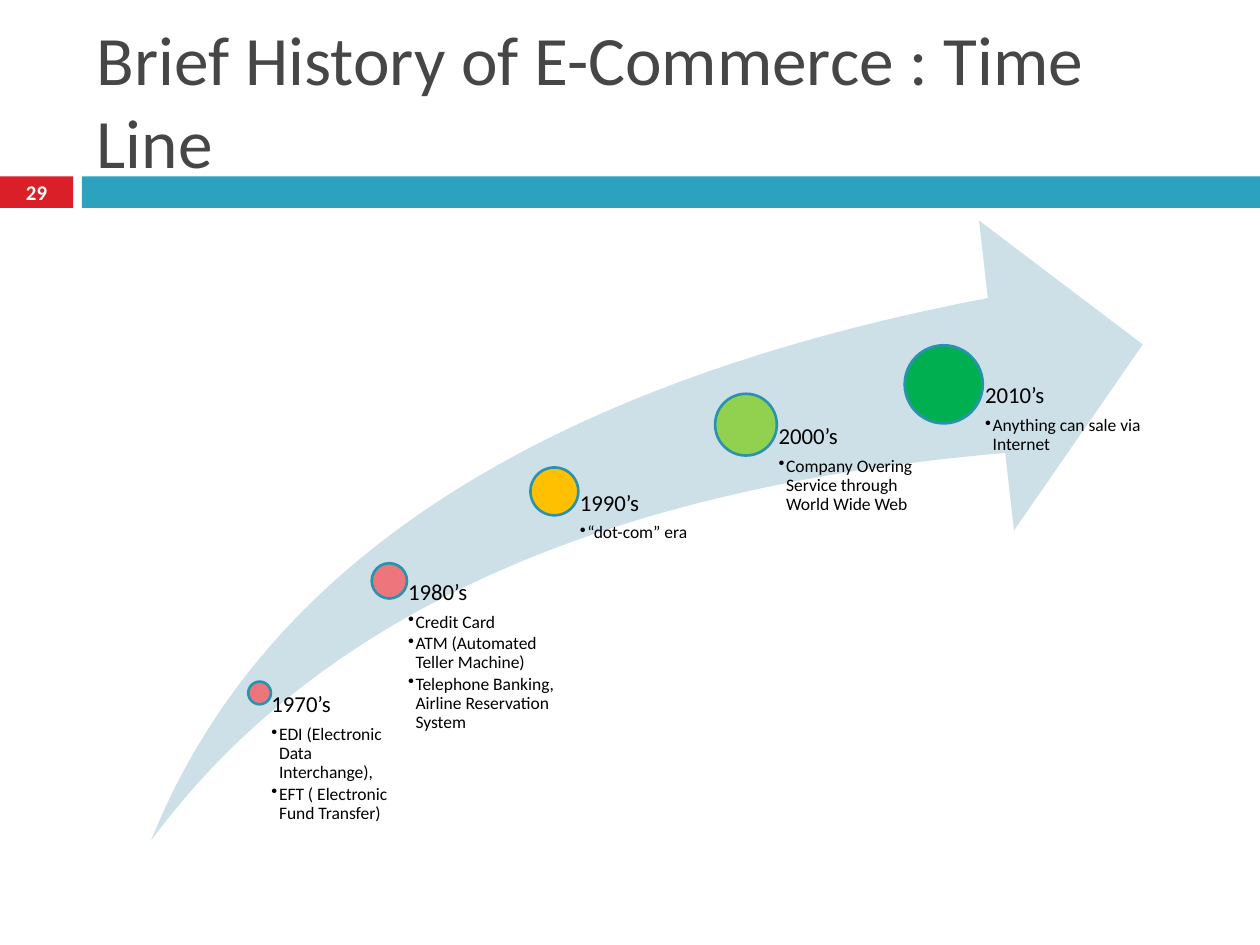
"""Build the e-commerce history timeline slide."""
from lxml.etree import SubElement
from pptx import Presentation
from pptx.dml.color import RGBColor
from pptx.enum.shapes import MSO_SHAPE as Kind
from pptx.enum.text import MSO_ANCHOR as Anchor, PP_ALIGN as Align
from pptx.oxml.ns import qn
from pptx.util import Inches, Pt

FONT = "Calibri"
RED = RGBColor(0xDA, 0x1F, 0x28)
TEAL = RGBColor(0x2D, 0xA2, 0xBF)
EDGE = RGBColor(0x29, 0x93, 0xAD)
PALE = RGBColor(0xCD, 0xE0, 0xE8)
GREY = RGBColor(0x46, 0x46, 0x46)
BLACK = RGBColor(0, 0, 0)
WHITE = RGBColor(255, 255, 255)
ROSE = RGBColor(0xEC, 0x76, 0x7C)
GOLD = RGBColor(0xFF, 0xC0, 0x00)
LIME = RGBColor(0x92, 0xD0, 0x50)
GREEN = RGBColor(0x00, 0xB0, 0x50)

TITLE = "Brief History of E-Commerce : Time Line"
NUMBER = "29"
BASE = 6.67
ERAS = [
    ("1970’s", ["EDI (Electronic Data Interchange),",
                "EFT ( Electronic Fund Transfer)"],
     2.06, 5.5, 0.18, 1.03, ROSE),
    ("1980’s", ["Credit Card", "ATM (Automated Teller Machine)",
                "Telephone Banking, Airline Reservation System"],
     3.09, 4.61, 0.28, 1.31, ROSE),
    ("1990’s", ["“dot-com” era"], 4.4, 3.9, 0.38, 1.52, GOLD),
    ("2000’s", ["Company Overing Service through World Wide Web"],
     5.92, 3.37, 0.49, 1.57, LIME),
    ("2010’s", ["Anything can sale via Internet"],
     7.49, 3.05, 0.62, 1.57, GREEN),
]


def draw(slide, kind, box, fill, edge=None):
    shape = slide.shapes.add_shape(kind, *map(Inches, box))
    shape.shadow.inherit = False
    shape.fill.solid()
    shape.fill.fore_color.rgb = fill
    if edge is None:
        shape.line.fill.background()
    else:
        shape.line.color.rgb = edge
        shape.line.width = Pt(1.5)
    return shape


def frame(slide, box, pad, anchor):
    text = slide.shapes.add_textbox(*map(Inches, box)).text_frame
    text.word_wrap = True
    text.vertical_anchor = anchor
    text.margin_left, text.margin_right = map(Inches, pad)
    text.margin_top = text.margin_bottom = 0
    return text


def write(para, words, size, color, bold=False):
    run = para.add_run()
    run.text = words
    font = run.font
    font.name, font.size, font.bold = FONT, Pt(size), bold
    font.color.rgb = color


def space(para, after):
    para.line_spacing = 0.9
    para.space_after = Pt(after)


def bullet(para):
    props = para._p.get_or_add_pPr()
    props.set("marL", str(Inches(0.06)))
    props.set("indent", str(Inches(-0.06)))
    SubElement(props, qn("a:buChar")).set("char", "•")


def era(slide, name, notes, x, y, size, width, fill):
    half = size / 2
    draw(slide, Kind.OVAL, (x - half, y - half, size, size), fill, EDGE)
    text = frame(slide, (x, y, width, BASE - y), (size * 0.53, 0), Anchor.TOP)
    head = text.paragraphs[0]
    space(head, 4.5)
    write(head, name, 13, BLACK)
    for note in notes:
        para = text.add_paragraph()
        para.level = 1
        space(para, 1.5)
        bullet(para)
        write(para, note, 10, BLACK)


def main():
    deck = Presentation()
    deck.slide_width, deck.slide_height = Inches(10), Inches(7.5)
    slide = deck.slides.add_slide(deck.slide_layouts[6])
    draw(slide, Kind.RECTANGLE, (0, 1.4, 0.58, 0.25), RED)
    draw(slide, Kind.RECTANGLE, (0.65, 1.4, 9.35, 0.25), TEAL)
    title = frame(slide, (0.67, 0.25, 8.92, 1.08), (0.1, 0.1), Anchor.MIDDLE)
    write(title.paragraphs[0], TITLE, 39.6, GREY)
    number = frame(slide, (0, 1.39, 0.58, 0.27), (0, 0), Anchor.MIDDLE)
    number.paragraphs[0].alignment = Align.CENTER
    write(number.paragraphs[0], NUMBER, 11.9, WHITE, True)
    arrow = draw(slide, Kind.SWOOSH_ARROW, (1.2, 1.75, 7.87, 4.92), PALE)
    arrow.adjustments[0] = arrow.adjustments[1] = 0.25
    for item in ERAS:
        era(slide, *item)
    deck.save("out.pptx")


if __name__ == "__main__":
    main()
